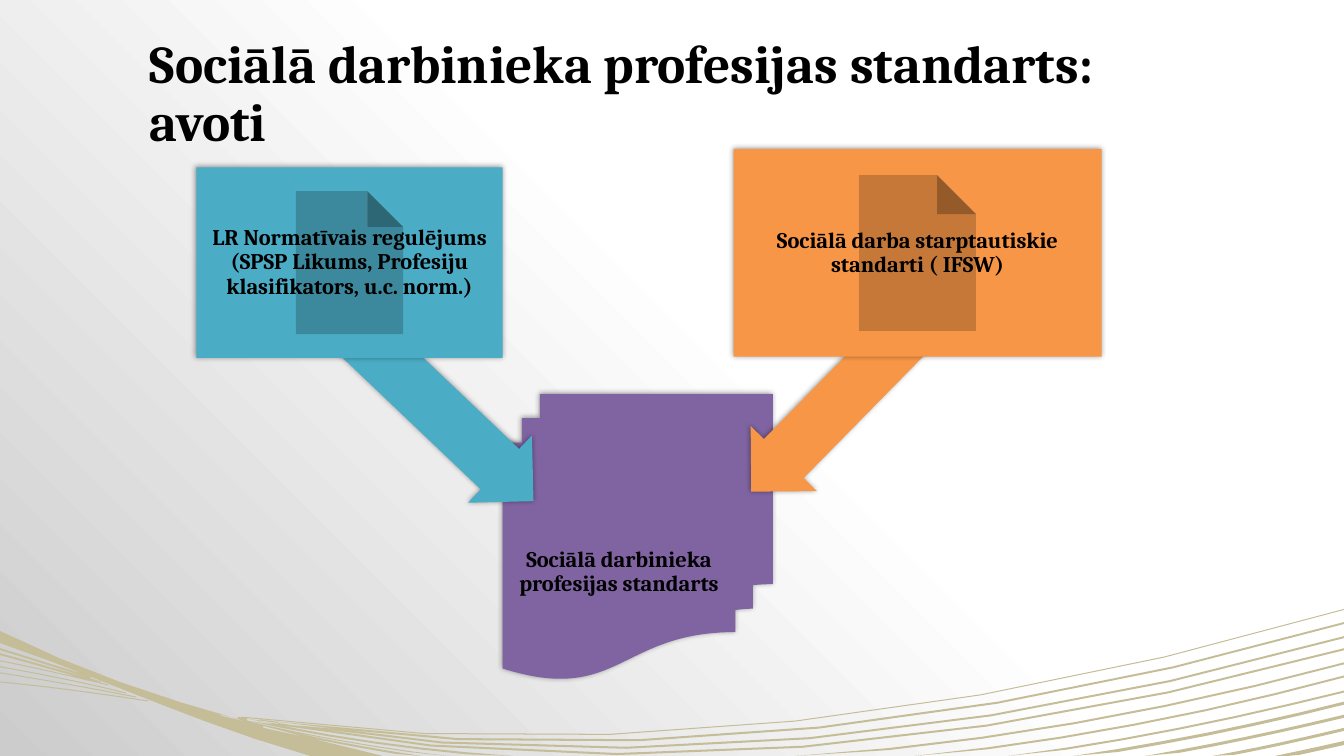
from dataclasses import dataclass

from lxml import etree
from pptx import Presentation
from pptx.dml.color import RGBColor
from pptx.enum.shapes import MSO_SHAPE
from pptx.enum.text import MSO_ANCHOR, PP_ALIGN
from pptx.oxml.ns import qn
from pptx.util import Cm, Pt

DOCUMENT = MSO_SHAPE.ACTION_BUTTON_DOCUMENT
MULTIDOCUMENT = MSO_SHAPE.FLOWCHART_MULTIDOCUMENT
LEFT_ARROW = MSO_SHAPE.LEFT_ARROW
MIDDLE, BOTTOM = MSO_ANCHOR.MIDDLE, MSO_ANCHOR.BOTTOM
LEFT, CENTER = PP_ALIGN.LEFT, PP_ALIGN.CENTER


@dataclass(frozen=True)
class Theme:
    font: str = "Cambria"
    title_size: int = 38
    label_size: int = 16
    text: str = "000000"
    purple: str = "8064A2"
    teal: str = "4BACC6"
    orange: str = "F79646"
    wave: str = "C4BD97"
    back_light: str = "FFFFFF"
    back_dark: str = "CCCCCC"


theme = Theme()


def write(shape, text, size, align, anchor):
    frame = shape.text_frame
    frame.word_wrap = True
    frame.vertical_anchor = anchor
    frame.text = text
    para = frame.paragraphs[0]
    para.alignment = align
    para.line_spacing = 0.9
    font = para.runs[0].font
    font.name, font.size, font.bold = theme.font, Pt(size), True
    font.color.rgb = RGBColor.from_string(theme.text)


def curve(start, control_1, control_2, end, steps=6):
    """Return points along a cubic Bezier curve."""
    points = []
    for step in range(steps + 1):
        t = step / steps
        weights = ((1 - t) ** 3, 3 * t * (1 - t) ** 2, 3 * t * t * (1 - t), t ** 3)
        points.append(tuple(
            sum(w * p for w, p in zip(weights, axis))
            for axis in zip(start, control_1, control_2, end)))
    return points


deck = Presentation()
deck.slide_width, deck.slide_height = Cm(33.87), Cm(19.05)
page = deck.slides.add_slide(deck.slide_layouts[6])

# Background: white, turning grey towards the lower left corner
back = page.background.fill
back.gradient()
back.gradient_angle = 225
for stop, position, color in zip(back.gradient_stops, (0.45, 1),
                                 (theme.back_light, theme.back_dark)):
    stop.position = position
    stop.color.rgb = RGBColor.from_string(color)

# Wave: thin strands (four curve points and a thickness) around a solid core.
# Points are in inches, the freeform grid is in thousandths of an inch.
GRID = 1000
PAGE_BOTTOM = 7.5
strands = [
    ((2.4, 7.11), (6, 7.6), (9.8, 7.08), (13.34, 6.04), 0.01),
    ((2.76, 7.16), (6.31, 7.65), (9.99, 7.13), (13.34, 6.17), 0.02),
    ((2.58, 7.14), (6.18, 7.75), (9.93, 7.27), (13.34, 6.31), 0.02),
    ((2.45, 7.13), (6.08, 7.83), (9.89, 7.38), (13.34, 6.43), 0.02),
    ((7.89, 7.5), (9.75, 7.38), (11.59, 7.04), (13.34, 6.57), 0.02),
    ((9.07, 7.5), (10.54, 7.35), (11.97, 7.07), (13.34, 6.7), 0.02),
    ((10, 7.5), (11.15, 7.35), (12.26, 7.12), (13.34, 6.85), 0.02),
    ((10.65, 7.5), (11.53, 7.37), (12.43, 7.19), (13.34, 6.96), 0.03),
    ((11.36, 7.5), (12.06, 7.38), (12.72, 7.24), (13.34, 7.09), 0.03),
    ((12.03, 7.5), (12.48, 7.42), (12.92, 7.32), (13.34, 7.22), 0.03),
    ((12.65, 7.5), (12.89, 7.45), (13.12, 7.4), (13.34, 7.35), 0.04),
    ((2.36, 7.11), (3.26, 7.31), (4.18, 7.44), (5.09, 7.5), 0.02),
    ((2.19, 7.09), (2.95, 7.28), (3.69, 7.41), (4.44, 7.5), 0.01),
    ((2.61, 7.2), (3.13, 7.32), (3.65, 7.42), (4.18, 7.5), 0.02),
    ((0, 6.43), (0.3, 6.52), (0.6, 6.62), (0.9, 6.71), 0.02),
    ((0, 6.48), (0.3, 6.56), (0.61, 6.65), (1, 6.76), 0.02),
    ((0, 6.55), (0.35, 6.62), (0.7, 6.7), (1.07, 6.79), 0.01),
    ((0, 6.61), (0.4, 6.68), (0.8, 6.76), (1.25, 6.87), 0.01),
    ((0, 6.67), (0.44, 6.74), (0.89, 6.82), (1.35, 6.91), 0.01),
    ((0, 6.76), (0.41, 6.8), (0.89, 6.86), (1.47, 6.95), 0.01),
]
core_top = curve((0, 6.26), (1.2, 6.85), (2.3, 7.14), (3.8, 7.5))
core_bottom = curve((0, 6.38), (1, 6.72), (2, 7.2), (3.08, 7.5))
outlines = [core_top + core_bottom[::-1]]
for *points, thickness in strands:
    top = curve(*points)
    bottom = [(x, min(y + thickness, PAGE_BOTTOM)) for x, y in top]
    outlines.append(top + bottom[::-1])

start_x, start_y = outlines[0][0]
builder = page.shapes.build_freeform(start_x * GRID, start_y * GRID, Cm(2.54) / GRID)
for outline in outlines:
    scaled = [(x * GRID, y * GRID) for x, y in outline]
    builder.move_to(*scaled[0])
    builder.add_line_segments(scaled[1:], close=True)
wave = builder.convert_to_shape()
wave.shadow.inherit = False
wave.fill.solid()
wave.fill.fore_color.rgb = RGBColor.from_string(theme.wave)
wave.line.fill.background()

title = page.shapes.add_textbox(Cm(3.53), Cm(0.74), Cm(25.4), Cm(3.23))
write(title, "Sociālā darbinieka profesijas standarts: avoti", theme.title_size, LEFT, BOTTOM)

# Diagram: two sources with arrows to the standard, from back to front
diagram = [
    (MULTIDOCUMENT, (12.67, 9.93, 6.81, 7.19), 0, theme.purple,
     "Sociālā darbinieka profesijas standarts", 0.93),
    (LEFT_ARROW, (8.1, 9.32, 6.2, 2.34), 223.6, theme.teal, "", 0),
    (DOCUMENT, (4.95, 4.22, 7.72, 4.8), 0, theme.teal,
     "LR Normatīvais regulējums (SPSP Likums, Profesiju klasifikators, u.c. norm.)", 0.08),
    (LEFT_ARROW, (18.01, 9.02, 6.17, 2.34), 314.5, theme.orange, "", 0),
    (DOCUMENT, (18.49, 3.76, 9.27, 5.23), 0, theme.orange,
     "Sociālā darba starptautiskie standarti ( IFSW)", 0.08),
]
for kind, place, rotation, color, text, top_inset in diagram:
    shape = page.shapes.add_shape(kind, *map(Cm, place))
    shape.rotation = rotation
    shape.fill.solid()
    shape.fill.fore_color.rgb = RGBColor.from_string(color)
    shape.line.fill.background()
    if kind == LEFT_ARROW:
        shape.adjustments[0], shape.adjustments[1] = 0.6, 0.5
    if text:
        write(shape, text, theme.label_size, CENTER, MIDDLE)
        frame = shape.text_frame
        frame.margin_left = frame.margin_right = frame.margin_bottom = Cm(0.08)
        frame.margin_top = Cm(top_inset)

    shape.shadow.inherit = False
    effects = shape._element.spPr.find(qn("a:effectLst"))
    shadow = etree.SubElement(effects, qn("a:outerShdw"), blurRad=str(Pt(4)),
                              dist=str(Pt(1)), dir=str(225 * 60000), rotWithShape="0")
    shade = etree.SubElement(shadow, qn("a:srgbClr"), val=theme.text)
    etree.SubElement(shade, qn("a:alpha"), val="40000")

deck.save("out.pptx")
